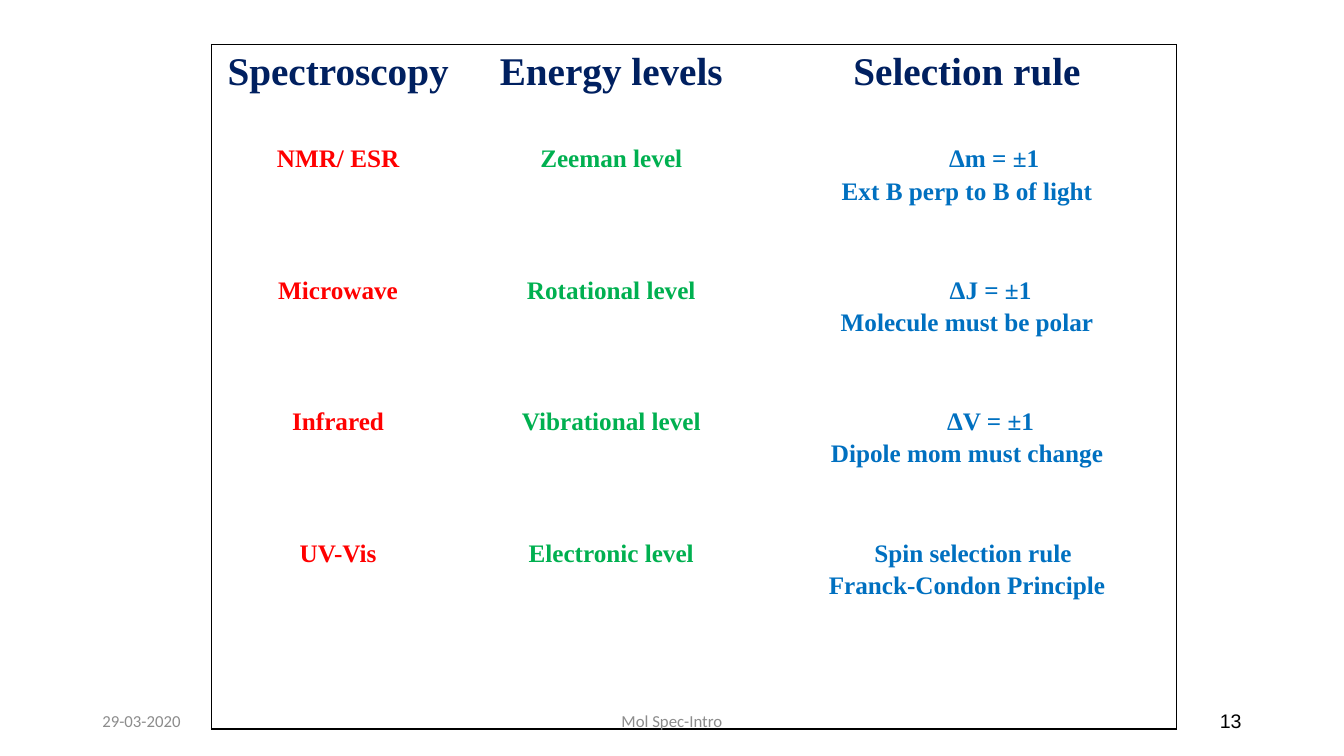
from pptx import Presentation
from pptx.dml.color import RGBColor
from pptx.enum.text import MSO_ANCHOR, PP_ALIGN as Align
from pptx.oxml import parse_xml
from pptx.oxml.ns import nsdecls
from pptx.util import Cm, Pt


def format_text(paragraph, text, color, **font_values):
    run = paragraph.add_run()
    run.text = text
    run.font.color.rgb = RGBColor.from_string(color)
    for name, value in font_values.items():
        setattr(run.font, name, value)


def set_borders(cell, outer_sides):
    """Draw black lines on the outer sides (letters out of LRTB), none on the rest."""
    properties = cell._tc.get_or_add_tcPr()
    for side in "LRTB":
        fill = "<a:noFill/>"
        if side in outer_sides:
            fill = '<a:solidFill><a:srgbClr val="000000"/></a:solidFill>'
        properties.append(parse_xml(
            f'<a:ln{side} {nsdecls("a")} w="12700">{fill}</a:ln{side}>'))


presentation = Presentation()
presentation.slide_width = Cm(33.87)
presentation.slide_height = Cm(19.05)
slide = presentation.slides.add_slide(presentation.slide_layouts[6])

# Each cell is a list of lines; the indent moves the first rule line to the right
rows = [
    (["Spectroscopy"], ["Energy levels"], ["Selection rule"], 0),
    (["NMR/ ESR"], ["Zeeman level"], ["Δm = ±1", "Ext B perp to B of light"], 1.37),
    (["Microwave"], ["Rotational level"], ["ΔJ = ±1", "Molecule must be polar"], 1.19),
    (["Infrared"], ["Vibrational level"], ["ΔV = ±1", "Dipole mom must change"], 1.19),
    (["UV-Vis"], ["Electronic level"],
     ["Spin selection rule", "Franck-Condon Principle"], 0.3),
]
column_widths = [6.38, 7.39, 10.54]
row_heights = [2.44, 3.31, 3.31, 3.31, 4.88]
column_colors = ["FF0000", "00B050", "0070C0"]
last_row, last_column = len(rows) - 1, len(column_widths) - 1
cell_format = {"margin_left": Cm(0.2), "margin_right": Cm(0.2),
               "margin_top": 0, "margin_bottom": 0}

table = slide.shapes.add_table(
    len(rows), len(column_widths), Cm(5.33), Cm(1.12),
    Cm(sum(column_widths)), Cm(sum(row_heights))).table
table.first_row = table.horz_banding = False
for column, width in zip(table.columns, column_widths):
    column.width = Cm(width)

for row_index, (*row_cells, indent) in enumerate(rows):
    table.rows[row_index].height = Cm(row_heights[row_index])
    is_header = row_index == 0
    for column_index, lines in enumerate(row_cells):
        cell = table.cell(row_index, column_index)
        for name, value in cell_format.items():
            setattr(cell, name, value)
        sides = {"L": column_index == 0, "R": column_index == last_column,
                 "T": is_header, "B": row_index == last_row}
        set_borders(cell, [side for side, is_outer in sides.items() if is_outer])
        cell.fill.solid()
        cell.fill.fore_color.rgb = RGBColor.from_string("FFFFFF")

        for line_index, line in enumerate(lines):
            frame = cell.text_frame
            paragraph = frame.add_paragraph() if line_index else frame.paragraphs[0]
            paragraph.alignment = Align.CENTER
            paragraph.line_spacing = 1.15
            if column_index == last_column and line_index == 0 and indent:
                paragraph._p.get_or_add_pPr().set("marL", str(Cm(indent)))
            format_text(paragraph, line,
                        "002060" if is_header else column_colors[column_index],
                        name="Times New Roman", bold=True,
                        size=Pt(28 if is_header else 18))

footers = [
    ("13", 23.92, 7.62, Align.RIGHT, "Arial", 14, "000000"),
    ("29-03-2020", 2.33, 7.62, Align.LEFT, "Calibri", 12, "8C8C8C"),
    ("Mol Spec-Intro", 11.22, 11.43, Align.CENTER, "Calibri", 12, "8C8C8C"),
]
for text, left, width, alignment, font_name, size, color in footers:
    footer = slide.shapes.add_textbox(Cm(left), Cm(17.66), Cm(width), Cm(1.01))
    footer.text_frame.word_wrap = True
    footer.text_frame.vertical_anchor = MSO_ANCHOR.MIDDLE
    paragraph = footer.text_frame.paragraphs[0]
    paragraph.alignment = alignment
    format_text(paragraph, text, color, name=font_name, size=Pt(size))

presentation.save("out.pptx")
